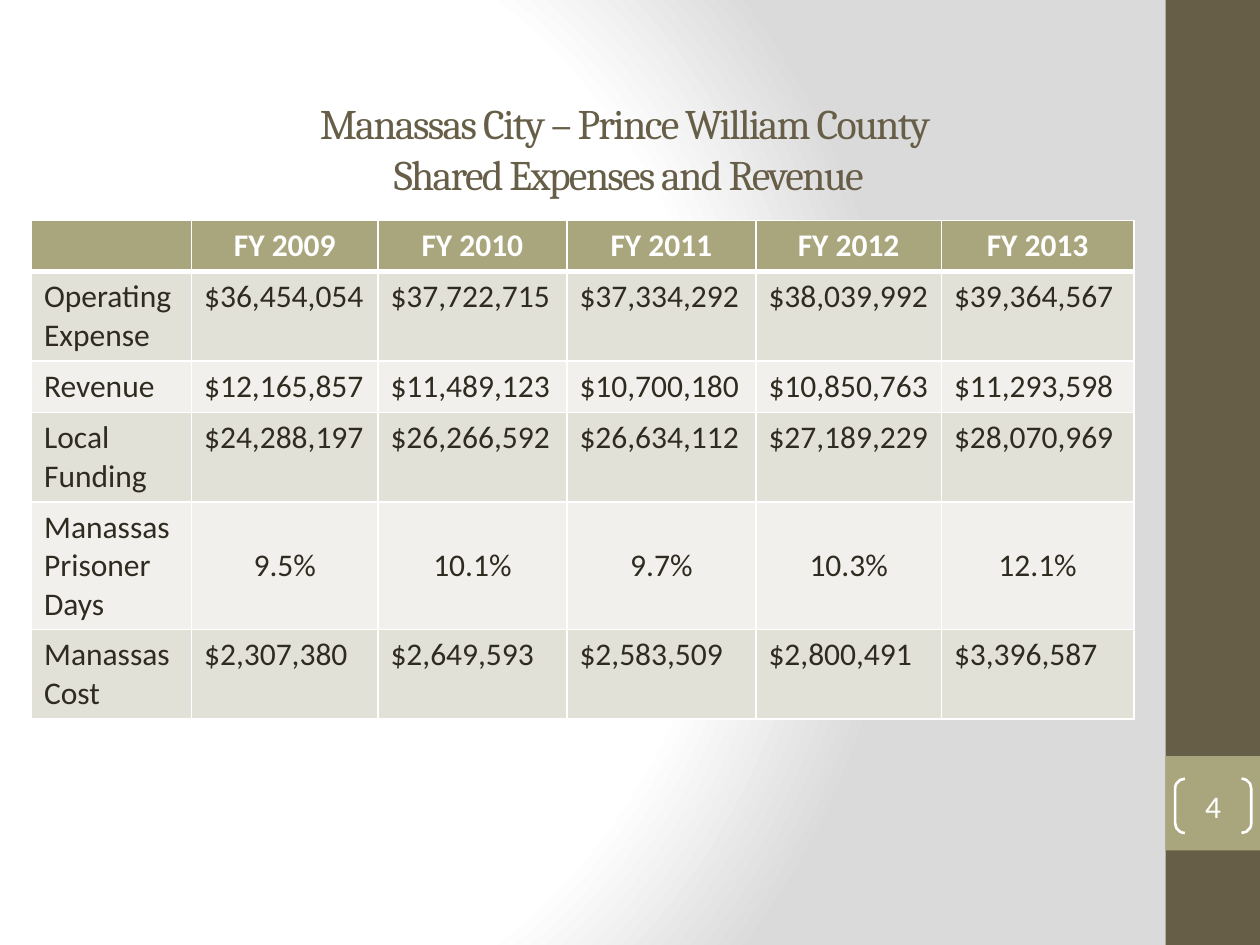
from lxml.etree import SubElement
from pptx import Presentation
from pptx.dml.color import RGBColor
from pptx.enum.shapes import MSO_SHAPE as Shape
from pptx.enum.text import MSO_ANCHOR as Anchor, PP_ALIGN as Align
from pptx.oxml import parse_xml
from pptx.oxml.ns import nsdecls, qn
from pptx.util import Pt

COLORS = {
    "white": "FFFFFF", "grey": "DADADA", "brown": "675E47", "olive": "A9A57C",
    "ink": "2F2B20", "band_dark": "E2E1D7", "band_light": "F1F0EC",
}
TITLE = ["Manassas City – Prince William County ", "Shared Expenses and Revenue"]
PAGE_NUMBER = "4"
BUDGET = [
    ["", "FY 2009", "FY 2010", "FY 2011", "FY 2012", "FY 2013"],
    ["Operating Expense", "$36,454,054", "$37,722,715", "$37,334,292",
     "$38,039,992", "$39,364,567"],
    ["Revenue", "$12,165,857", "$11,489,123", "$10,700,180", "$10,850,763", "$11,293,598"],
    ["Local Funding", "$24,288,197", "$26,266,592", "$26,634,112",
     "$27,189,229", "$28,070,969"],
    ["Manassas Prisoner Days", "9.5%", "10.1%", "9.7%", "10.3%", "12.1%"],
    ["Manassas Cost", "$2,307,380", "$2,649,593", "$2,583,509", "$2,800,491", "$3,396,587"],
]
COLUMN_WIDTHS = [91.5, 106.5, 108, 108, 106, 110]
ROW_HEIGHTS = [29.2, 51.2, 29.2, 51.2, 73, 51.2]
SLIDE_WIDTH, SLIDE_HEIGHT = 720, 540
BAR_WIDTH = 54
BAR_LEFT = SLIDE_WIDTH - BAR_WIDTH


def rgb(name):
    return RGBColor.from_string(COLORS[name])


def points(*lengths):
    return [Pt(length) for length in lengths]


def add_run(paragraph, text, color, size=18, font="Calibri", bold=False):
    run = paragraph.add_run()
    run.text = text
    run.font.name, run.font.size, run.font.bold = font, Pt(size), bold
    run.font.color.rgb = rgb(color)
    return run


def paint_background(slide):
    """Circular gradient, white around the left side and grey towards the right."""
    stops = "".join(
        f'<a:gs pos="{pos * 1000}"><a:srgbClr val="{COLORS[name]}"/></a:gs>'
        for pos, name in [(0, "white"), (75, "white"), (100, "grey")])
    slide.element.cSld.insert(0, parse_xml(
        f'<p:bg {nsdecls("p", "a")}><p:bgPr><a:gradFill rotWithShape="1">'
        f'<a:gsLst>{stops}</a:gsLst><a:path path="circle">'
        '<a:fillToRect l="20000" t="50000" r="100000" b="50000"/></a:path>'
        '</a:gradFill><a:effectLst/></p:bgPr></p:bg>'))


def add_block(slide, top, height, color):
    block = slide.shapes.add_shape(
        Shape.RECTANGLE, *points(BAR_LEFT, top, BAR_WIDTH, height))
    block.shadow.inherit = False
    block.fill.solid()
    block.fill.fore_color.rgb = rgb(color)
    block.line.fill.background()


def add_title(slide):
    frame = slide.shapes.add_textbox(*points(54, 42, 610.5, 85.5)).text_frame
    frame.word_wrap = True
    frame.vertical_anchor = Anchor.MIDDLE
    paragraph = frame.paragraphs[0]
    paragraph.alignment = Align.CENTER
    for i, line in enumerate(TITLE):
        if i:
            paragraph.add_line_break()
        run = add_run(paragraph, line, "brown", 24, "Cambria")
        run.font._element.set("spc", "-100")


def set_borders(cell, widths):
    """Draw white borders; widths maps a side (L, R, T, B) to points."""
    properties = cell._tc.get_or_add_tcPr()
    for i, (side, width) in enumerate(widths.items()):
        line = properties.makeelement(qn(f"a:ln{side}"), {"w": str(Pt(width))})
        fill = SubElement(line, qn("a:solidFill"))
        SubElement(fill, qn("a:srgbClr"), val=COLORS["white"])
        properties.insert(i, line)


def add_budget_table(slide):
    table = slide.shapes.add_table(
        len(BUDGET), len(BUDGET[0]),
        *points(18, 126, sum(COLUMN_WIDTHS), sum(ROW_HEIGHTS))).table
    for column, width in zip(table.columns, COLUMN_WIDTHS):
        column.width = Pt(width)
    for r, (row, height) in enumerate(zip(BUDGET, ROW_HEIGHTS)):
        table.rows[r].height = Pt(height)
        header = r == 0
        fill = "olive" if header else "band_dark" if r % 2 else "band_light"
        for c, text in enumerate(row):
            cell = table.cell(r, c)
            cell.fill.solid()
            cell.fill.fore_color.rgb = rgb(fill)
            set_borders(cell, {"L": 1, "R": 1, "T": 3 if r == 1 else 1,
                               "B": 3 if header else 1})
            paragraph = cell.text_frame.paragraphs[0]
            if header or text.endswith("%"):
                paragraph.alignment = Align.CENTER
            if text.endswith("%"):
                cell.vertical_anchor = Anchor.MIDDLE
            if text:
                add_run(paragraph, text, "white" if header else "ink", bold=header)


def add_page_number(slide):
    bracket = slide.shapes.add_shape(Shape.DOUBLE_BRACKET, *points(671.5, 445, 43.5, 31))
    bracket.adjustments[0] = 0.18
    bracket.shadow.inherit = False
    bracket.fill.background()
    bracket.line.color.rgb = rgb("white")
    bracket.line.width = Pt(1.5)
    frame = bracket.text_frame
    frame.margin_left = frame.margin_right = frame.margin_top = frame.margin_bottom = 0
    frame.vertical_anchor = Anchor.MIDDLE
    frame.paragraphs[0].alignment = Align.CENTER
    add_run(frame.paragraphs[0], PAGE_NUMBER, "white")


def main():
    deck = Presentation()
    deck.slide_width, deck.slide_height = points(SLIDE_WIDTH, SLIDE_HEIGHT)
    slide = deck.slides.add_slide(deck.slide_layouts[6])
    paint_background(slide)
    add_block(slide, 0, SLIDE_HEIGHT, "brown")
    add_block(slide, 432, BAR_WIDTH, "olive")
    add_title(slide)
    add_budget_table(slide)
    add_page_number(slide)
    deck.save("out.pptx")


if __name__ == "__main__":
    main()
